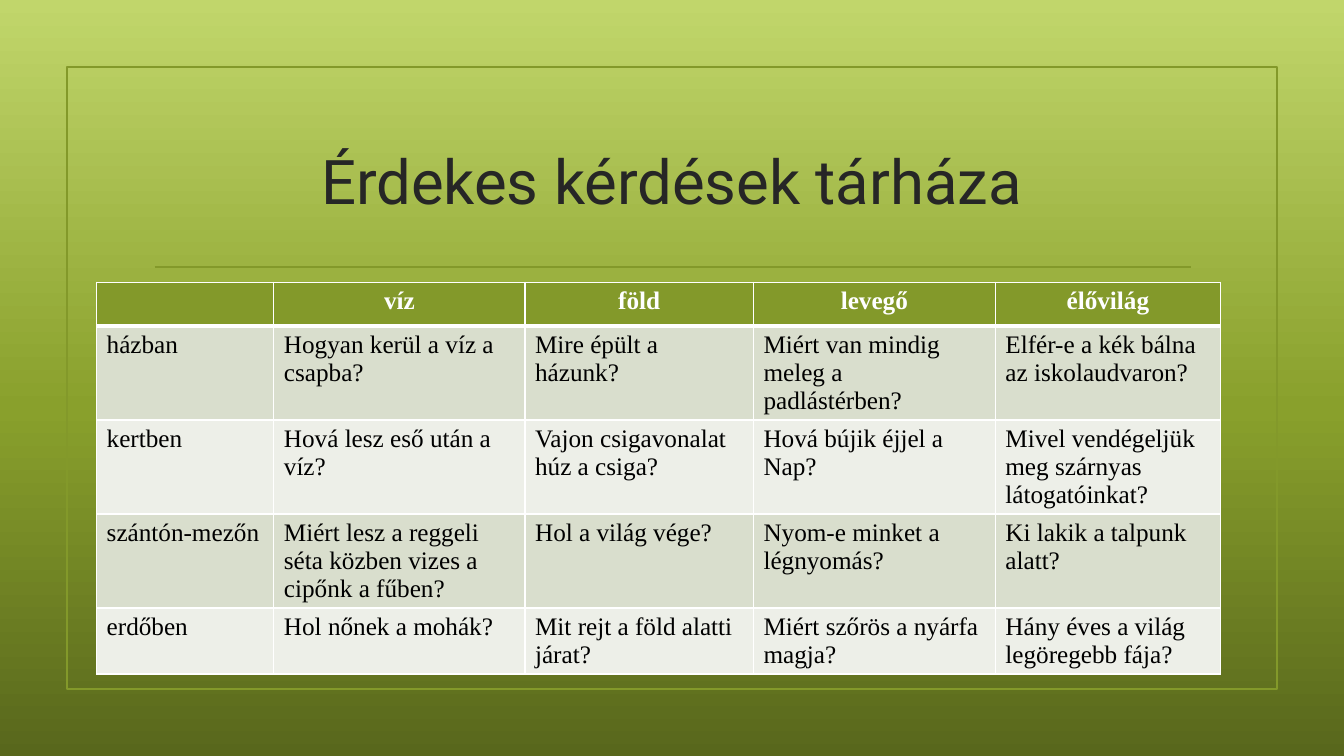
from pptx import Presentation
from pptx.dml.color import RGBColor
from pptx.enum.shapes import MSO_CONNECTOR as Connector, MSO_SHAPE as Shape
from pptx.enum.text import MSO_ANCHOR as Anchor, PP_ALIGN as Align
from pptx.oxml import parse_xml
from pptx.oxml.ns import nsdecls, qn
from pptx.util import Inches, Pt
from copy import deepcopy

GRID_COLUMNS, GRID_ROWS = 160, 90
BACKDROP = [(0, "58671C"), (0.46, "89A02C"), (1, "C1D66B")]
COLUMN_SPANS = [21.1, 29.9, 27.2, 28.8, 26.8]
ROW_SPANS = [5.2, 11.2, 11.2, 11.2, 7.8]
QUESTIONS = [
    ["", "víz", "föld", "levegő", "élővilág"],
    ["házban", "Hogyan kerül a víz a csapba?", "Mire épült a házunk?",
     "Miért van mindig meleg a padlástérben?", "Elfér-e a kék bálna az iskolaudvaron?"],
    ["kertben", "Hová lesz eső után a víz?", "Vajon csigavonalat húz a csiga?",
     "Hová bújik éjjel a Nap?", "Mivel vendégeljük meg szárnyas látogatóinkat?"],
    ["szántón-mezőn", "Miért lesz a reggeli séta közben vizes a cipőnk a fűben?",
     "Hol a világ vége?", "Nyom-e minket a légnyomás?", "Ki lakik a talpunk alatt?"],
    ["erdőben", "Hol nőnek a mohák?", "Mit rejt a föld alatti járat?",
     "Miért szőrös a nyárfa magja?", "Hány éves a világ legöregebb fája?"],
]


def rgb(code):
    return RGBColor.from_string(code)


class QuestionSlide:
    """Draws styled elements on one slide, placed in grid columns and rows."""

    accent, ink, white = "83992A", "262626", "FFFFFF"
    bands = ["EDEFE8", "D9DECD"]
    title_font, body_font = "Roboto", "Times New Roman"

    def __init__(self, deck):
        self.column = deck.slide_width / GRID_COLUMNS
        self.row = deck.slide_height / GRID_ROWS
        self.slide = deck.slides.add_slide(deck.slide_layouts[5])

    def place(self, left, top, width, height):
        return (round(left * self.column), round(top * self.row),
                round(width * self.column), round(height * self.row))

    def add_text(self, paragraph, text, font, size, color, bold=False, align=Align.LEFT):
        paragraph.alignment = align
        run = paragraph.add_run()
        run.text = text
        run.font.name, run.font.size, run.font.bold = font, Pt(size), bold
        run.font.color.rgb = rgb(color)

    def backdrop(self, stops):
        fill = self.slide.background.fill
        fill.gradient()
        fill.gradient_angle = 90
        stop_list = self.slide.element.find(".//" + qn("a:gsLst"))
        stop_list.append(deepcopy(stop_list[-1]))
        for stop, (position, color) in zip(fill.gradient_stops, stops):
            stop.position, stop.color.rgb = position, rgb(color)

    def frame(self, *area):
        border = self.slide.shapes.add_shape(Shape.RECTANGLE, *self.place(*area))
        border.shadow.inherit = False
        border.fill.background()
        border.line.color.rgb, border.line.width = rgb(self.accent), Pt(1.25)

    def rule(self, start, end, level):
        x1, y, x2, _ = self.place(start, level, end, 0)
        divider = self.slide.shapes.add_connector(Connector.STRAIGHT, x1, y, x2, y)
        divider.line.color.rgb, divider.line.width = rgb(self.accent), Pt(1.25)
        divider._element.spPr.append(parse_xml(f"<a:effectLst {nsdecls('a')}/>"))

    def title(self, text, *area):
        heading = self.slide.shapes.title
        heading.left, heading.top, heading.width, heading.height = self.place(*area)
        heading.text_frame.vertical_anchor = Anchor.MIDDLE
        self.add_text(heading.text_frame.paragraphs[0], text, self.title_font, 44,
                      self.ink, align=Align.CENTER)

    def borders(self, cell, row):
        weights = {"L": 1, "R": 1, "T": 3 if row == 1 else 1, "B": 3 if row == 0 else 1}
        for index, (side, weight) in enumerate(weights.items()):
            cell._tc.get_or_add_tcPr().insert(index, parse_xml(
                f'<a:ln{side} {nsdecls("a")} w="{Pt(weight)}"><a:solidFill>'
                f'<a:srgbClr val="{self.white}"/></a:solidFill></a:ln{side}>'))

    def table(self, left, top, column_spans, row_spans, entries):
        area = self.place(left, top, sum(column_spans), sum(row_spans))
        grid = self.slide.shapes.add_table(len(row_spans), len(column_spans), *area).table
        for column, span in zip(grid.columns, column_spans):
            column.width = round(span * self.column)
        for r, (span, texts) in enumerate(zip(row_spans, entries)):
            grid.rows[r].height = round(span * self.row)
            header = r == 0
            for c, text in enumerate(texts):
                cell = grid.cell(r, c)
                cell.fill.solid()
                cell.fill.fore_color.rgb = rgb(self.accent if header else self.bands[r % 2])
                self.borders(cell, r)
                if text:
                    self.add_text(cell.text_frame.paragraphs[0], text, self.body_font, 18,
                                  self.white if header else "000000", header,
                                  Align.CENTER if header else Align.LEFT)


def main():
    deck = Presentation()
    deck.slide_width, deck.slide_height = Inches(13.33), Inches(7.5)
    page = QuestionSlide(deck)
    page.backdrop(BACKDROP)
    page.frame(8, 8, 144, 74)
    page.rule(18.4, 141.8, 31.8)
    page.title("Érdekes kérdések tárháza", 17, 12.8, 126, 17.2)
    page.table(11.5, 33.6, COLUMN_SPANS, ROW_SPANS, QUESTIONS)
    deck.save("out.pptx")


if __name__ == "__main__":
    main()
